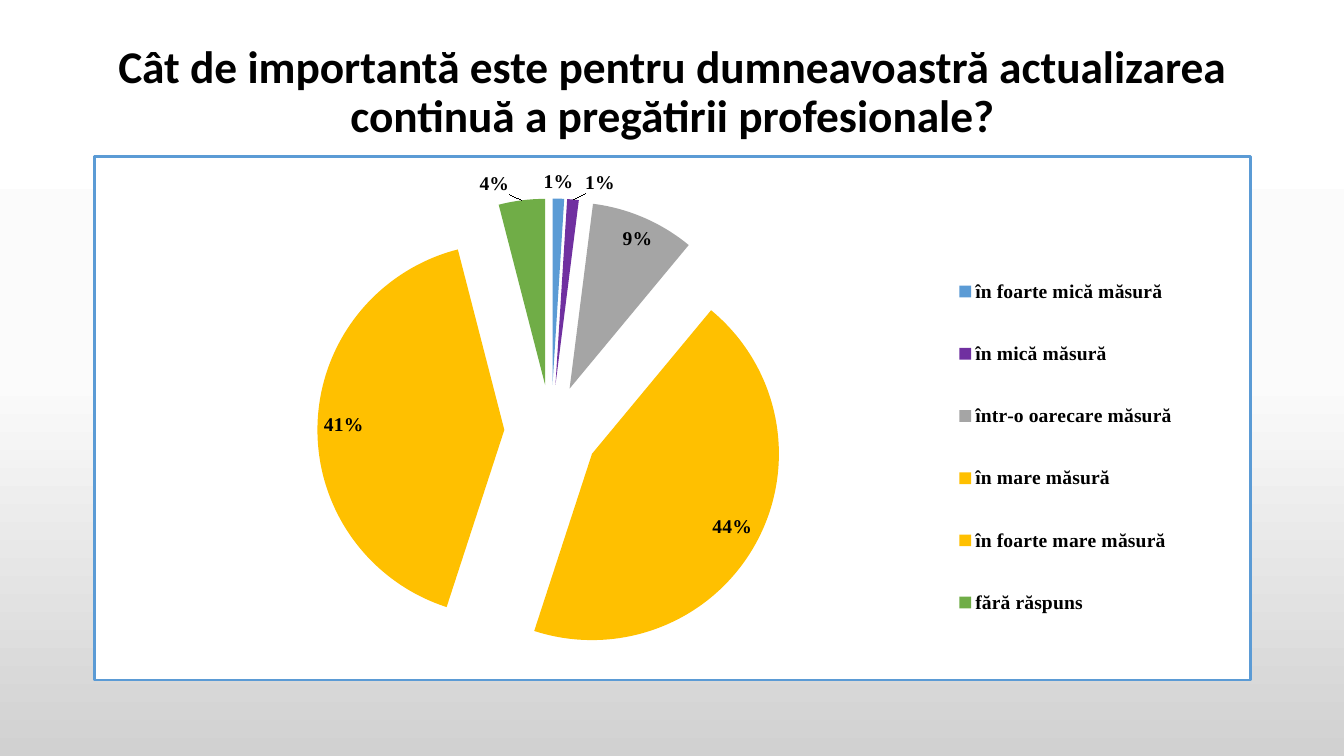
"""Build a slide with a title and an exploded pie of survey replies."""
from copy import deepcopy
from dataclasses import dataclass

from pptx import Presentation
from pptx.chart.chart import Chart
from pptx.chart.data import CategoryChartData
from pptx.dml.color import RGBColor
from pptx.enum.chart import XL_CHART_TYPE, XL_LABEL_POSITION, XL_LEGEND_POSITION
from pptx.enum.text import MSO_ANCHOR, MSO_AUTO_SIZE, PP_ALIGN
from pptx.oxml import parse_xml
from pptx.oxml.ns import nsdecls, qn
from pptx.slide import Slide
from pptx.util import Inches, Pt

PIE = XL_CHART_TYPE.PIE
BEST = XL_LABEL_POSITION.BEST_FIT
RIGHT = XL_LEGEND_POSITION.RIGHT
MIDDLE = MSO_ANCHOR.MIDDLE
FIXED = MSO_AUTO_SIZE.NONE
CENTER = PP_ALIGN.CENTER


@dataclass(frozen=True)
class Theme:
    ink: str = "000000"
    paper: str = "FFFFFF"
    edge: str = "5B9BD5"
    shades: tuple = ((0, "FFFFFF"), (0.5, "FBFBFB"), (1, "D1D1D1"))
    head_font: str = "Calibri"
    head_size: float = 32.4
    pie_font: str = "Times New Roman"
    pie_size: float = 14


@dataclass(frozen=True)
class Slice:
    name: str
    value: int
    color: str


THEME = Theme()
TITLE = "Cât de importantă este pentru dumneavoastră actualizarea continuă a pregătirii profesionale?"
SLICES = [
    Slice("în foarte mică măsură", 1, "5B9BD5"),
    Slice("în mică măsură", 1, "7030A0"),
    Slice("într-o oarecare măsură", 9, "A5A5A5"),
    Slice("în mare măsură", 44, "FFC000"),
    Slice("în foarte mare măsură", 41, "FFC000"),
    Slice("fără răspuns", 4, "70AD47"),
]
LEFT, WIDTH = Inches(0.92), Inches(11.5)


def paint_back(slide: Slide) -> None:
    """Fill the background with the theme's vertical gradient."""
    fill = slide.background.fill
    fill.gradient()
    fill.gradient_angle = 270
    stops = slide.element.find(".//" + qn("a:gsLst"))
    stops.append(deepcopy(stops[0]))
    for stop, (place, color) in zip(fill.gradient_stops, THEME.shades):
        stop.position = place
        stop.color.rgb = RGBColor.from_string(color)


def add_title(slide: Slide) -> None:
    """Place and format the title."""
    title = slide.shapes.title
    title.left, title.top, title.width, title.height = LEFT, Inches(0.4), WIDTH, Inches(1.05)
    frame = title.text_frame
    frame.text = TITLE
    frame.word_wrap = True
    frame.auto_size = FIXED
    frame.vertical_anchor = MIDDLE
    line = frame.paragraphs[0]
    line.alignment = CENTER
    line.line_spacing = 0.9
    font = line.runs[0].font
    font.name, font.size, font.bold = THEME.head_font, Pt(THEME.head_size), True
    font.color.rgb = RGBColor.from_string(THEME.ink)


def layout(x: float, y: float, w: float, h: float, inner: bool = False):
    """Return a manual layout in fractions of the chart."""
    target = '<c:layoutTarget val="inner"/>' if inner else ""
    return parse_xml(
        f'<c:layout {nsdecls("c")}><c:manualLayout>{target}'
        '<c:xMode val="edge"/><c:yMode val="edge"/>'
        f'<c:x val="{x}"/><c:y val="{y}"/><c:w val="{w}"/><c:h val="{h}"/>'
        "</c:manualLayout></c:layout>")


def shift_label(index: int, x: float, y: float):
    """Return a percent label moved off its usual place."""
    flags = "".join(
        f'<c:show{key} val="{int(key == "Percent")}"/>'
        for key in ("LegendKey", "Val", "CatName", "SerName", "Percent", "BubbleSize"))
    return parse_xml(
        f'<c:dLbl {nsdecls("c")}><c:idx val="{index}"/><c:layout><c:manualLayout>'
        f'<c:x val="{x}"/><c:y val="{y}"/></c:manualLayout></c:layout>'
        '<c:numFmt formatCode="0%" sourceLinked="0"/>'
        f'<c:dLblPos val="bestFit"/>{flags}</c:dLbl>')


def frame_chart(chart: Chart) -> None:
    """Give the chart its fill, border and inner places."""
    root = chart.element
    root.find(qn("c:txPr")).addprevious(parse_xml(
        f'<c:spPr {nsdecls("c", "a")}>'
        f'<a:solidFill><a:srgbClr val="{THEME.paper}"/></a:solidFill>'
        f'<a:ln w="{Pt(2)}"><a:solidFill><a:srgbClr val="{THEME.edge}"/></a:solidFill></a:ln>'
        "</c:spPr>"))
    plot = root.find(".//" + qn("c:plotArea"))
    legend = root.find(".//" + qn("c:legend"))
    for part in (plot, legend):
        for old in part.findall(qn("c:layout")):
            part.remove(old)
    plot.insert(0, layout(0.19, 0.08, 0.41, 0.89, True))
    legend.find(qn("c:legendPos")).addnext(layout(0.73, 0.16, 0.22, 0.79))


def add_pie(slide: Slide) -> None:
    """Add the exploded pie with its legend and labels."""
    data = CategoryChartData()
    data.categories = [part.name for part in SLICES]
    data.add_series("Series 1", [part.value for part in SLICES])
    chart = slide.shapes.add_chart(PIE, LEFT, Inches(1.54), WIDTH, Inches(5.22), data).chart
    chart.has_title = False
    font = chart.font
    font.name, font.size, font.bold = THEME.pie_font, Pt(THEME.pie_size), True
    font.color.rgb = RGBColor.from_string(THEME.ink)
    chart.has_legend = True
    chart.legend.position = RIGHT
    chart.legend.include_in_layout = False
    plot = chart.plots[0]
    plot.vary_by_categories = True
    series = plot.series[0]
    for index, part in enumerate(SLICES):
        fill = series.points[index].format.fill
        fill.solid()
        fill.fore_color.rgb = RGBColor.from_string(part.color)
    burst = parse_xml(f'<c:explosion {nsdecls("c")} val="25"/>')
    chart.element.find(".//" + qn("c:dPt")).addprevious(burst)
    labels = series.data_labels
    labels.show_percentage = True
    labels.show_value = False
    labels.number_format = "0%"
    labels.number_format_is_linked = False
    labels.position = BEST
    chart.element.find(".//" + qn("c:dLbls")).insert(0, shift_label(len(SLICES) - 1, -0.01, 0))
    frame_chart(chart)


def main() -> None:
    """Build and save the slide."""
    deck = Presentation()
    deck.slide_width, deck.slide_height = Inches(13.33), Inches(7.5)
    slide = deck.slides.add_slide(deck.slide_layouts[5])
    paint_back(slide)
    add_title(slide)
    add_pie(slide)
    deck.save("out.pptx")


if __name__ == "__main__":
    main()
